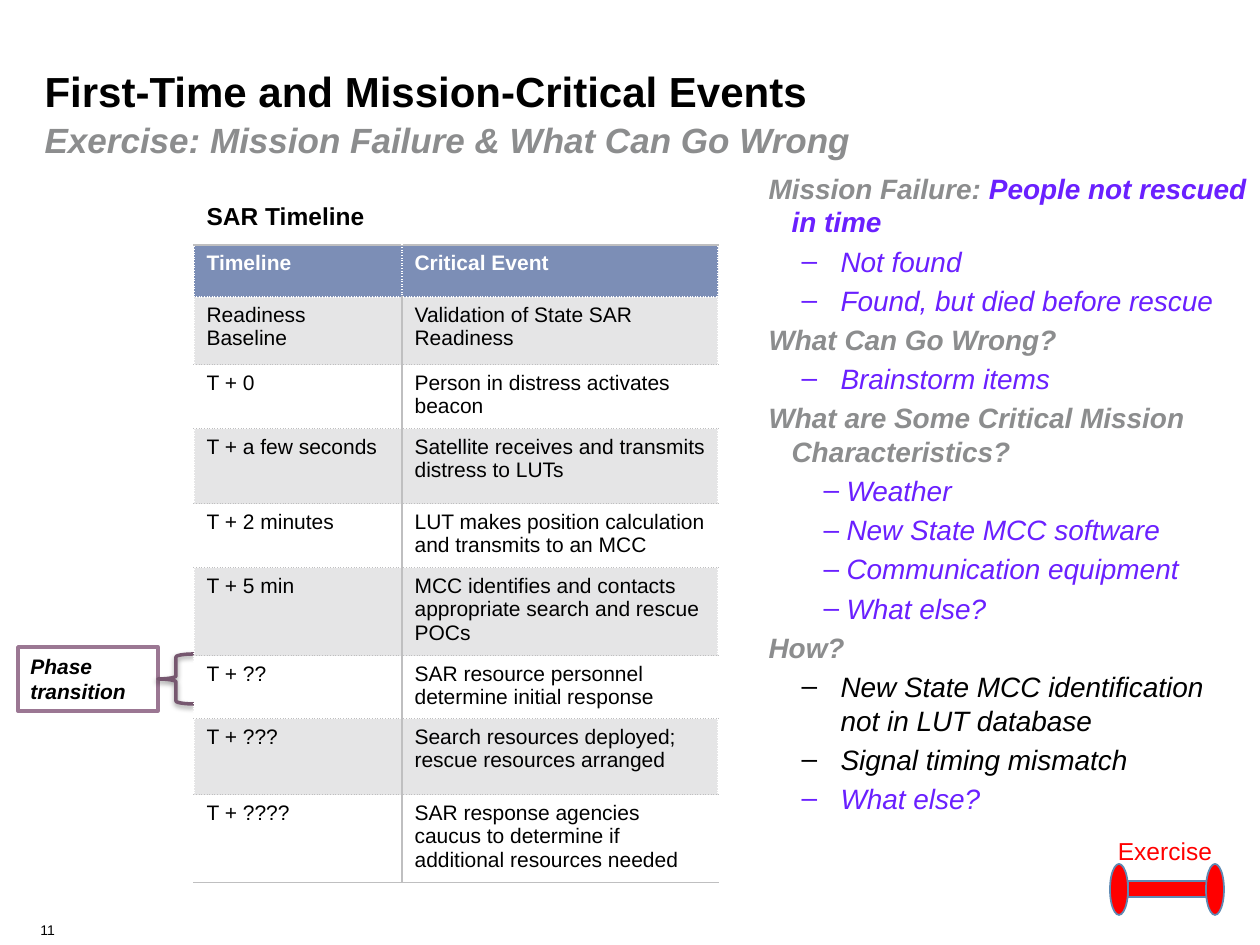
from dataclasses import dataclass

from lxml import etree
from pptx import Presentation
from pptx.dml.color import RGBColor
from pptx.enum.shapes import MSO_SHAPE
from pptx.enum.text import MSO_ANCHOR, MSO_AUTO_SIZE, PP_ALIGN
from pptx.oxml.ns import qn
from pptx.util import Pt

RECTANGLE, OVAL, LEFT_BRACE = MSO_SHAPE.RECTANGLE, MSO_SHAPE.OVAL, MSO_SHAPE.LEFT_BRACE
TOP, MIDDLE = MSO_ANCHOR.TOP, MSO_ANCHOR.MIDDLE
LEFT, CENTER = PP_ALIGN.LEFT, PP_ALIGN.CENTER
PX = 914400 / 126


@dataclass
class Theme:
    font: str = "Arial"
    black: str = "000000"
    white: str = "FFFFFF"
    gray: str = "8C8D8E"
    violet: str = "6A20FF"
    red: str = "FF0000"
    header: str = "586FA2"
    band: str = "E5E5E6"
    rule: str = "BFBFC0"
    phase: str = "9B7793"
    brace: str = "76576F"
    bar_line: str = "5E8AB4"
    title_size: int = 24
    subtitle_size: int = 20
    body_size: int = 16
    label_size: int = 14
    table_size: int = 12
    number_size: int = 8


theme = Theme()


def box(*lengths):
    return [round(length * PX) for length in lengths]


def style(paragraph, text, size, color, bold=False, italic=False, align=LEFT):
    paragraph.text = text
    paragraph.alignment = align
    font = paragraph.font
    font.name, font.size = theme.font, Pt(size)
    font.bold, font.italic = bold, italic
    font.color.rgb = RGBColor.from_string(color)


presentation = Presentation()
presentation.slide_width, presentation.slide_height = box(1260, 945)
slide = presentation.slides.add_slide(presentation.slide_layouts[3])
shapes = slide.shapes

# Title, subtitle and body placeholders
title, subtitle, body = slide.placeholders
for placeholder, place in (
    (title, (32, 59, 1012, 120)),
    (subtitle, (32, 112, 1012, 84)),
    (body, (756, 165, 504, 780)),
):
    placeholder.left, placeholder.top, placeholder.width, placeholder.height = box(*place)
    frame = placeholder.text_frame
    frame.word_wrap, frame.auto_size, frame.vertical_anchor = True, MSO_AUTO_SIZE.NONE, TOP

style(title.text_frame.paragraphs[0], "First-Time and Mission-Critical Events",
      theme.title_size, theme.black, bold=True)

# Outline: kind -> level, left margin, hanging indent
INDENTS = {"head": (0, 23, 23), "item": (1, 72, 39), "close": (1, 78, 23)}
outline = [
    ("head", "Mission Failure: ", theme.gray),
    ("item", "Not found", theme.violet),
    ("item", "Found, but died before rescue", theme.violet),
    ("head", "What Can Go Wrong?", theme.gray),
    ("item", "Brainstorm items", theme.violet),
    ("head", "What are Some Critical Mission Characteristics?", theme.gray),
    ("close", "Weather", theme.violet),
    ("close", "New State MCC software", theme.violet),
    ("close", "Communication equipment", theme.violet),
    ("close", "What else?", theme.violet),
    ("head", "How?", theme.gray),
    ("item", "New State MCC identification not in LUT database", theme.black),
    ("item", "Signal timing mismatch", theme.black),
    ("item", "What else?", theme.violet),
]
for index, (kind, text, color) in enumerate(outline):
    frame = body.text_frame
    paragraph = frame.add_paragraph() if index else frame.paragraphs[0]
    level, margin, hanging = INDENTS[kind]
    paragraph.level = level
    if index == 0:
        paragraph.space_before = Pt(0)
    properties = paragraph._p.get_or_add_pPr()
    properties.set("marL", str(round(margin * PX)))
    properties.set("indent", str(round(-hanging * PX)))
    if kind == "head":
        etree.SubElement(properties, qn("a:buNone"))
    else:
        etree.SubElement(properties, qn("a:buChar"), char="–")
    style(paragraph, text, theme.body_size, color, bold=kind == "head", italic=True)

answer = body.text_frame.paragraphs[0].add_run()
answer.text = "People not rescued in time"
answer.font.color.rgb = RGBColor.from_string(theme.violet)

paragraph = subtitle.text_frame.paragraphs[0]
paragraph.space_before = Pt(0)
properties = paragraph._p.get_or_add_pPr()
properties.set("marL", "0")
properties.set("indent", "0")
etree.SubElement(properties, qn("a:buNone"))
style(paragraph, "Exercise: Mission Failure & What Can Go Wrong",
      theme.subtitle_size, theme.gray, bold=True, italic=True)

# Phase transition label and brace
label = shapes.add_shape(RECTANGLE, *box(18, 647, 140, 64))
label.shadow.inherit = False
label.fill.solid()
label.fill.fore_color.rgb = RGBColor.from_string(theme.white)
label.line.color.rgb = RGBColor.from_string(theme.phase)
label.line.width = Pt(2)
label.text_frame.vertical_anchor = MIDDLE
style(label.text_frame.paragraphs[0], "Phase", theme.table_size, theme.black, True, True)
style(label.text_frame.add_paragraph(), "transition", theme.table_size, theme.black, True, True)

brace = shapes.add_shape(LEFT_BRACE, *box(158, 654, 36, 50))
brace.shadow.inherit = False
brace.fill.background()
brace.line.color.rgb = RGBColor.from_string(theme.brace)
brace.line.width = Pt(2)
effects = brace._element.spPr.find(qn("a:effectLst"))
shadow = etree.SubElement(effects, qn("a:outerShdw"), blurRad=str(Pt(3.1)),
                          dist=str(Pt(1.6)), dir="5400000", rotWithShape="0")
shadow_color = etree.SubElement(shadow, qn("a:srgbClr"), val=theme.black)
etree.SubElement(shadow_color, qn("a:alpha"), val="38000")

# Timeline table
rows = [
    (48, "SAR Timeline", ""),
    (52, "Timeline", "Critical Event"),
    (68, "Readiness Baseline", "Validation of State SAR Readiness"),
    (64, "T + 0", "Person in distress activates beacon"),
    (75, "T + a few seconds", "Satellite receives and transmits distress to LUTs"),
    (64, "T + 2 minutes", "LUT makes position calculation and transmits to an MCC"),
    (88, "T + 5 min", "MCC identifies and contacts appropriate search and rescue POCs"),
    (63, "T + ??", "SAR resource personnel determine initial response"),
    (76, "T + ???", "Search resources deployed; rescue resources arranged"),
    (88, "T + ????", "SAR response agencies caucus to determine if additional resources needed"),
]
table_height = sum(row[0] for row in rows)
table = shapes.add_table(len(rows), 2, *box(194, 197, 524, table_height)).table
table.first_row = table.horz_banding = False
table.columns[0].width, table.columns[1].width = box(208, 316)
table.cell(0, 0).merge(table.cell(0, 1))

white_dots, gray_dots, gray_line = (theme.white, "sysDot"), (theme.rule, "sysDot"), (theme.rule, "solid")
row_edges = [white_dots, gray_line, white_dots] + [gray_dots] * (len(rows) - 3) + [gray_line]
for row, (height, *texts) in enumerate(rows):
    table.rows[row].height = round(height * PX)
    divider = white_dots if row < 2 else gray_line
    column_edges = [white_dots, divider, white_dots]
    for column, text in enumerate(texts):
        cell = table.cell(row, column)
        cell_properties = cell._tc.get_or_add_tcPr()
        edges = {"lnL": column_edges[column], "lnR": column_edges[column + 1],
                 "lnT": row_edges[row], "lnB": row_edges[row + 1]}
        for side, (color, dash) in edges.items():
            line = etree.SubElement(cell_properties, qn("a:" + side), w=str(Pt(0.75)))
            fill = etree.SubElement(line, qn("a:solidFill"))
            etree.SubElement(fill, qn("a:srgbClr"), val=color)
            etree.SubElement(line, qn("a:prstDash"), val=dash)
        if row == 0:
            cell.fill.background()
        else:
            cell.fill.solid()
            color = theme.header if row == 1 else (theme.white if row % 2 else theme.band)
            cell.fill.fore_color.rgb = RGBColor.from_string(color)
        if row == 1:
            fill_color = cell_properties.find(qn("a:solidFill")).find(qn("a:srgbClr"))
            etree.SubElement(fill_color, qn("a:alpha"), val="78000")
        if text:
            style(cell.text_frame.paragraphs[0], text,
                  theme.label_size if row == 0 else theme.table_size,
                  theme.white if row == 1 else theme.black, bold=row < 2)

# Exercise dumbbell
dumbbell = shapes.add_group_shape().shapes
for kind, place in (
    (RECTANGLE, (1128, 881, 87, 16)),
    (OVAL, (1206, 864, 18, 51)),
    (OVAL, (1110, 864, 18, 51)),
):
    part = dumbbell.add_shape(kind, *box(*place))
    part.shadow.inherit = False
    part.fill.solid()
    part.fill.fore_color.rgb = RGBColor.from_string(theme.red)
    part.line.color.rgb = RGBColor.from_string(theme.bar_line)
    part.line.width = Pt(1)

# Exercise caption and slide number
for parent, place, text, size, color, align in (
    (dumbbell, (1099, 830, 132, 43), "Exercise", theme.label_size, theme.red, CENTER),
    (shapes, (28, 915, 96, 30), "11", theme.number_size, theme.black, LEFT),
):
    caption = parent.add_textbox(*box(*place))
    caption.text_frame.word_wrap = True
    style(caption.text_frame.paragraphs[0], text, size, color, align=align)

presentation.save("out.pptx")
